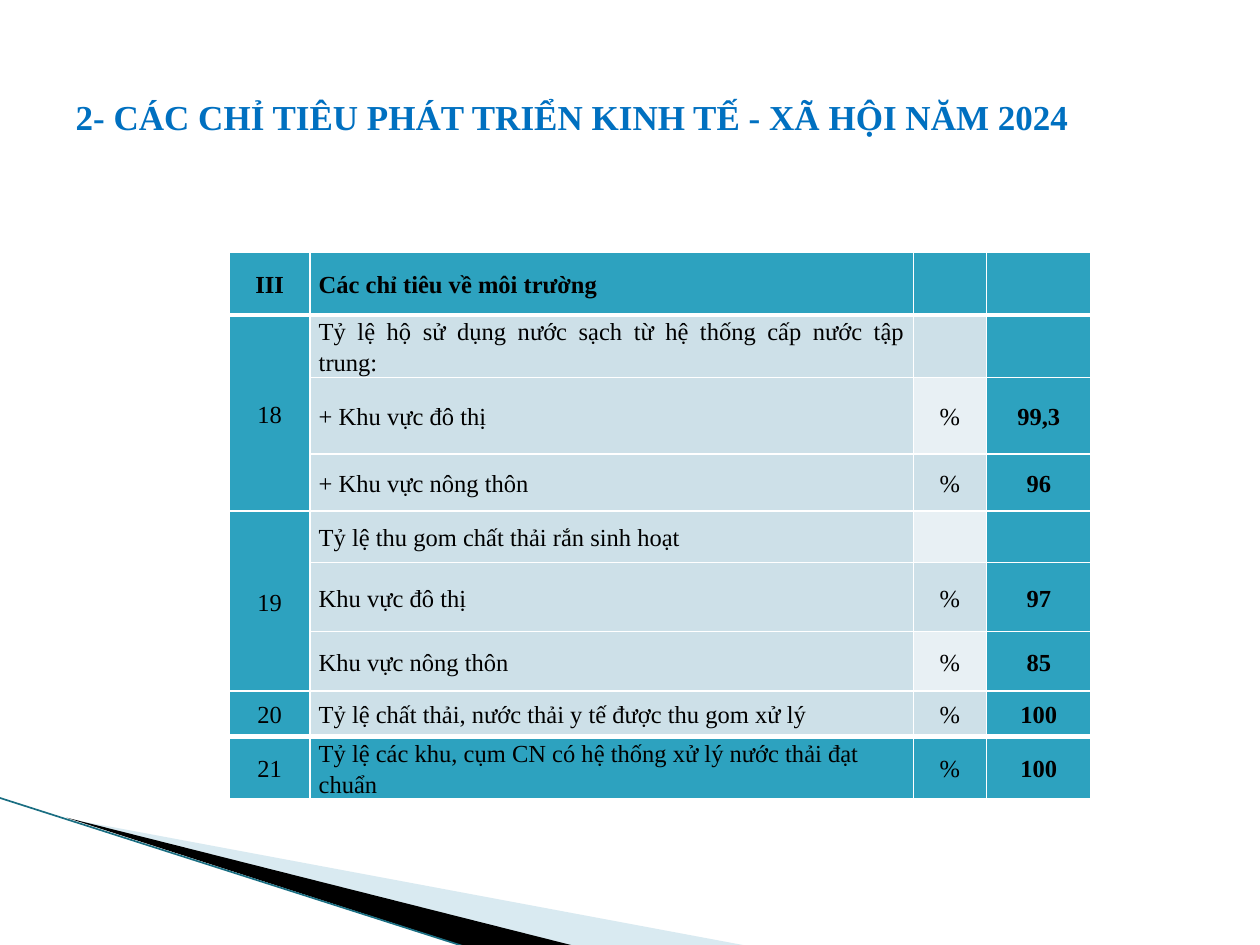
from lxml import etree
from pptx import Presentation
from pptx.dml.color import RGBColor
from pptx.enum.shapes import MSO_CONNECTOR
from pptx.enum.text import MSO_ANCHOR, PP_ALIGN
from pptx.oxml.ns import qn
from pptx.util import Inches, Pt

LEFT, CENTER, JUSTIFY = PP_ALIGN.LEFT, PP_ALIGN.CENTER, PP_ALIGN.JUSTIFY
MIDDLE = MSO_ANCHOR.MIDDLE
STRAIGHT = MSO_CONNECTOR.STRAIGHT

FONT = "Times New Roman"
BLACK = RGBColor(0x00, 0x00, 0x00)
TITLE_BLUE = RGBColor(0x00, 0x70, 0xC0)
TEAL = RGBColor(0x2D, 0xA2, 0xBF)
BAND_DARK = RGBColor(0xCD, 0xE0, 0xE8)
BAND_LIGHT = RGBColor(0xE8, 0xF0, 0xF4)
SWEEP_BLUE = RGBColor(0xA0, 0xCB, 0xDC)
SWEEP_LINE = RGBColor(0x1A, 0x6E, 0x82)
BORDER = "FFFFFF"

# Content
TITLE = "2- CÁC CHỈ TIÊU PHÁT TRIỂN KINH TẾ - XÃ HỘI NĂM 2024"
INDICATORS = [  # number, indicator, unit, target
    ("III", "Các chỉ tiêu về môi trường", "", ""),
    ("18", "Tỷ lệ hộ sử dụng nước sạch từ hệ thống cấp nước tập trung:", "", ""),
    ("", "+ Khu vực đô thị", "%", "99,3"),
    ("", "+ Khu vực nông thôn", "%", "96"),
    ("19", "Tỷ lệ thu gom chất thải rắn sinh hoạt", "", ""),
    ("", "Khu vực đô thị", "%", "97"),
    ("", "Khu vực nông thôn", "%", "85"),
    ("20", "Tỷ lệ chất thải, nước thải y tế được thu gom xử lý", "%", "100"),
    ("21", "Tỷ lệ các khu, cụm CN có hệ thống xử lý nước thải đạt chuẩn", "%", "100"),
]
COL_WIDTHS = [0.64, 4.79, 0.58, 0.83]
ROW_HEIGHTS = [0.5, 0.47, 0.61, 0.45, 0.41, 0.55, 0.47, 0.36, 0.36]
GROUPS = [(1, 3), (4, 6)]  # first and last row sharing one number
LAST = len(INDICATORS) - 1
NUMBER, INDICATOR, UNIT, TARGET = range(4)

PALE_SWEEP = [(0.55, 6.5), (5.95, 7.51), (4.56, 7.51)]
BLACK_SWEEP = [(0.53, 6.49), (4.57, 7.51), (3.72, 7.52)]


def add_sweep(slide, points, color, opacity=None):
    start, *rest = [(Inches(x), Inches(y)) for x, y in points]
    builder = slide.shapes.build_freeform(*start)
    builder.add_line_segments(rest, close=True)
    sweep = builder.convert_to_shape()
    sweep.shadow.inherit = False
    sweep.fill.solid()
    sweep.fill.fore_color.rgb = color
    sweep.line.fill.background()
    if opacity:
        rgb = sweep.fill._xPr.find(".//" + qn("a:srgbClr"))
        etree.SubElement(rgb, qn("a:alpha"), val=str(opacity * 1000))


def set_borders(cell, row):
    widths = {
        "L": 1,
        "R": 1,
        "T": 3 if row in (1, LAST) else 1,
        "B": 3 if row in (0, LAST - 1) else 1,
    }
    properties = cell._tc.get_or_add_tcPr()
    for side, width in widths.items():
        line = etree.SubElement(properties, qn("a:ln" + side), w=str(Pt(width)))
        solid = etree.SubElement(line, qn("a:solidFill"))
        etree.SubElement(solid, qn("a:srgbClr"), val=BORDER)


def cell_color(row, col):
    if row in (0, LAST) or col in (NUMBER, TARGET):
        return TEAL
    return BAND_LIGHT if col == UNIT and row % 2 == 0 else BAND_DARK


def write_cell(cell, text, row, col):
    cell.vertical_anchor = MIDDLE
    cell.margin_left = cell.margin_right = Inches(0.07)
    cell.margin_top = cell.margin_bottom = 0
    paragraph = cell.text_frame.paragraphs[0]
    if col == INDICATOR:
        paragraph.alignment = LEFT if row >= LAST - 1 else JUSTIFY
    else:
        paragraph.alignment = CENTER
    paragraph.line_spacing = 1.15
    paragraph.space_before = paragraph.space_after = Pt(2)
    run = paragraph.add_run()
    run.text = text
    run.font.name = FONT
    run.font.size = Pt(14)
    run.font.bold = row == 0 or col == TARGET
    run.font.color.rgb = BLACK


prs = Presentation()
prs.slide_width, prs.slide_height = Inches(10), Inches(7.5)
slide = prs.slides.add_slide(prs.slide_layouts[5])

# Corner decoration
add_sweep(slide, PALE_SWEEP, SWEEP_BLUE, opacity=40)
add_sweep(slide, BLACK_SWEEP, BLACK)
edge = slide.shapes.add_connector(
    STRAIGHT, Inches(-0.01), Inches(6.33), Inches(3.71), Inches(7.52))
edge.line.color.rgb = SWEEP_LINE
edge.line.width = Pt(0.95)
etree.SubElement(edge._element.spPr, qn("a:effectLst"))

# Indicator table
table = slide.shapes.add_table(
    len(INDICATORS), len(COL_WIDTHS), Inches(1.82), Inches(2),
    Inches(sum(COL_WIDTHS)), Inches(sum(ROW_HEIGHTS))).table
for column, width in zip(table.columns, COL_WIDTHS):
    column.width = Inches(width)
for table_row, height in zip(table.rows, ROW_HEIGHTS):
    table_row.height = Inches(height)
for row, values in enumerate(INDICATORS):
    for col, text in enumerate(values):
        cell = table.cell(row, col)
        set_borders(cell, row)
        cell.fill.solid()
        cell.fill.fore_color.rgb = cell_color(row, col)
        if text:
            write_cell(cell, text, row, col)
for first, last in GROUPS:
    table.cell(first, NUMBER).merge(table.cell(last, NUMBER))

# Title
title = slide.shapes.title
title.left, title.top = Inches(0.5), Inches(0.3)
title.width, title.height = Inches(9), Inches(1.25)
title.text_frame.vertical_anchor = MIDDLE
heading = title.text_frame.paragraphs[0]
heading.alignment = LEFT
heading_run = heading.add_run()
heading_run.text = TITLE
heading_run.font.name = FONT
heading_run.font.size = Pt(20)
heading_run.font.bold = True
heading_run.font.color.rgb = TITLE_BLUE

prs.save("out.pptx")
